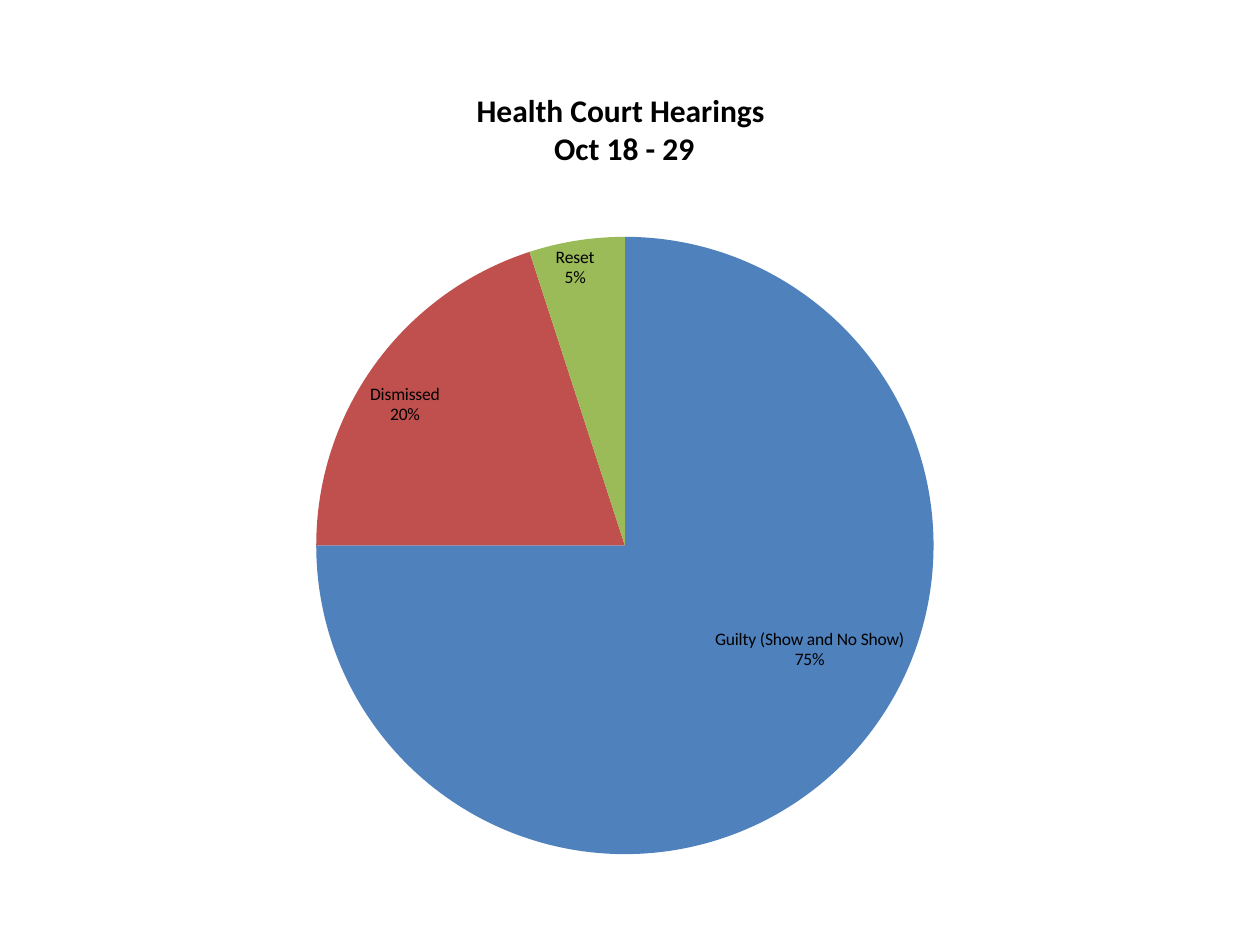
"""Build a slide with a pie chart of health court hearing outcomes."""
from typing import NamedTuple

import pptx
import pptx.chart.data
import pptx.dml.color
import pptx.enum.chart
import pptx.oxml
import pptx.oxml.ns
import pptx.util
from pptx.util import Inches


class Outcome(NamedTuple):
    name: str
    percent: int
    color: str
    label_shift: tuple[float, float]


OUTCOMES = [
    Outcome("Guilty (Show and No Show)", 75, "4F81BD", (0.06, -0.11)),
    Outcome("Dismissed", 20, "C0504D", (-0.01, 0.02)),
    Outcome("Reset", 5, "9BBB59", (-0.02, 0)),
]
TITLE_LINES = ["Health Court Hearings ", "Oct 18 - 29"]
CHART_LEFT, CHART_TOP, CHART_WIDTH, CHART_HEIGHT = 0.58, 0.5, 8.75, 6.42
PIE_LEFT, PIE_TOP, PIE_SIZE = 2.51, 1.88, 4.9
INSIDE_END = pptx.enum.chart.XL_LABEL_POSITION.INSIDE_END


def rgb(color: str) -> pptx.dml.color.RGBColor:
    return pptx.dml.color.RGBColor.from_string(color)


def style_font(font, size: int, bold: bool = False) -> None:
    font.name = "Calibri"
    font.size = pptx.util.Pt(size)
    font.bold = bold
    font.color.rgb = rgb("000000")


def make_layout(head: str, **values: float):
    parts = "".join(f'<c:{key} val="{value}"/>' for key, value in values.items())
    return pptx.oxml.parse_xml(
        f'<c:layout {pptx.oxml.ns.nsdecls("c")}><c:manualLayout>'
        f"{head}{parts}</c:manualLayout></c:layout>"
    )


def add_title(chart) -> None:
    chart.has_title = True
    text_frame = chart.chart_title.text_frame
    for index, line in enumerate(TITLE_LINES):
        paragraph = text_frame.add_paragraph() if index else text_frame.paragraphs[0]
        run = paragraph.add_run()
        run.text = line
        style_font(run.font, 18, bold=True)
    chart.chart_title.include_in_layout = False


def place_plot(chart) -> None:
    plot_area = chart.element.chart.plotArea
    for layout in plot_area.findall(pptx.oxml.ns.qn("c:layout")):
        plot_area.remove(layout)
    head = '<c:layoutTarget val="inner"/><c:xMode val="edge"/><c:yMode val="edge"/>'
    plot_area.insert(0, make_layout(
        head,
        x=(PIE_LEFT - CHART_LEFT) / CHART_WIDTH,
        y=(PIE_TOP - CHART_TOP) / CHART_HEIGHT,
        w=PIE_SIZE / CHART_WIDTH,
        h=PIE_SIZE / CHART_HEIGHT,
    ))


def style_labels(series) -> None:
    labels = series.data_labels
    labels.show_category_name = True
    labels.show_percentage = True
    labels.show_value = False
    labels.position = INSIDE_END
    style_font(labels.font, 10)
    for index, outcome in enumerate(OUTCOMES):
        point = series.points[index]
        point.format.fill.solid()
        point.format.fill.fore_color.rgb = rgb(outcome.color)
        style_font(point.data_label.font, 10)
        point.data_label.position = INSIDE_END
    flags = {"c:showVal": "0", "c:showCatName": "1", "c:showPercent": "1"}
    label_elements = labels._element.findall(pptx.oxml.ns.qn("c:dLbl"))
    for label, outcome in zip(label_elements, OUTCOMES):
        for tag, value in flags.items():
            label.find(pptx.oxml.ns.qn(tag)).set("val", value)
        x, y = outcome.label_shift
        label.insert(1, make_layout("", x=x, y=y))


def add_pie(slide) -> None:
    data = pptx.chart.data.CategoryChartData()
    data.categories = [outcome.name for outcome in OUTCOMES]
    data.add_series("Series 1", [outcome.percent for outcome in OUTCOMES])
    chart = slide.shapes.add_chart(
        pptx.enum.chart.XL_CHART_TYPE.PIE,
        Inches(CHART_LEFT), Inches(CHART_TOP),
        Inches(CHART_WIDTH), Inches(CHART_HEIGHT), data,
    ).chart
    style_font(chart.font, 10)
    chart.has_legend = False
    add_title(chart)
    place_plot(chart)
    plot = chart.plots[0]
    plot.vary_by_categories = True
    style_labels(plot.series[0])


def main() -> None:
    presentation = pptx.Presentation()
    presentation.slide_width = Inches(10)
    presentation.slide_height = Inches(7.5)
    add_pie(presentation.slides.add_slide(presentation.slide_layouts[6]))
    presentation.save("out.pptx")


if __name__ == "__main__":
    main()
